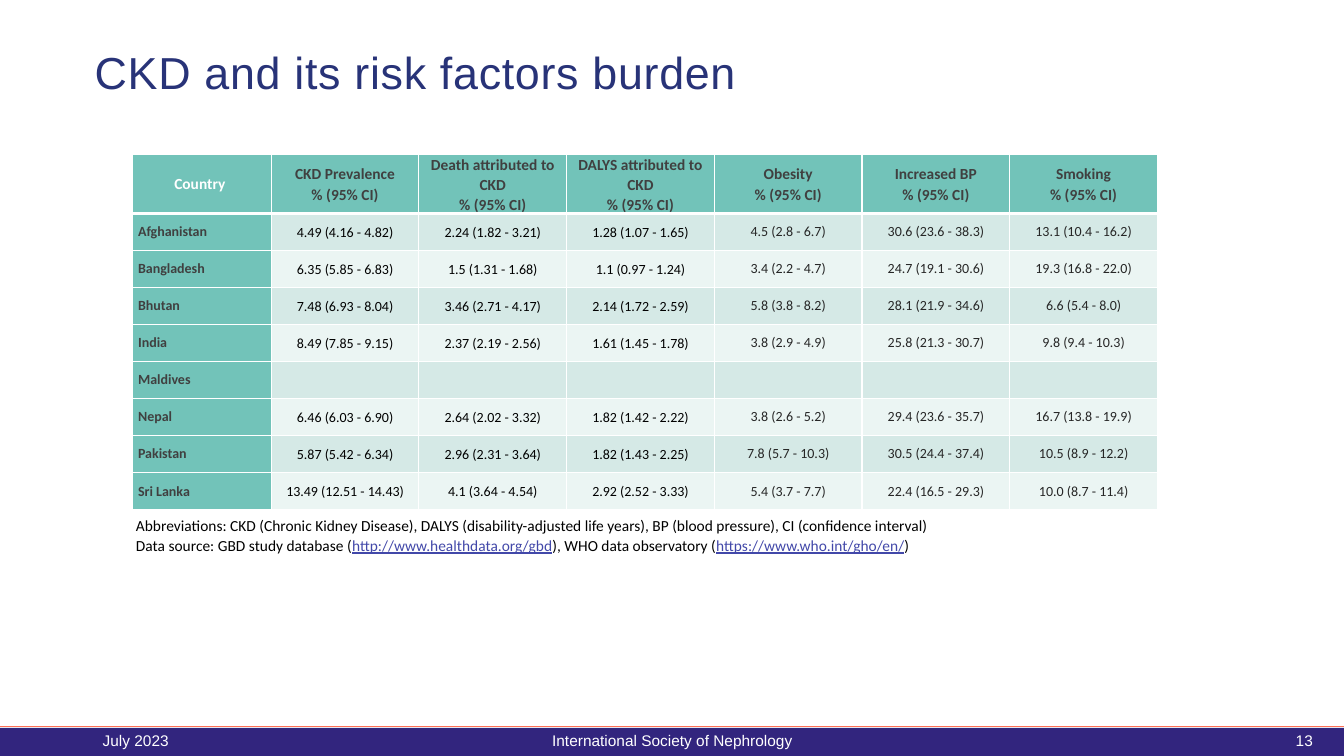
"""Builds the slide on chronic kidney disease and its risk factors by country."""
from lxml.etree import SubElement
from pptx import Presentation
from pptx.dml.color import RGBColor as RGB
from pptx.enum.shapes import MSO_CONNECTOR, MSO_SHAPE
from pptx.enum.text import MSO_ANCHOR as ANCHOR, MSO_AUTO_SIZE as AUTO, PP_ALIGN as ALIGN
from pptx.oxml.ns import qn
from pptx.util import Inches, Pt

TITLE = "CKD and its risk factors burden"
CI = "% (95% CI)"
HEADERS = ["Country ", "CKD Prevalence", "Death attributed to CKD", "DALYS attributed to CKD",
           "Obesity", "Increased BP", "Smoking"]
COUNTRIES = [
    ("Afghanistan", "4.49 (4.16 - 4.82)", "2.24 (1.82 - 3.21)", "1.28 (1.07 - 1.65)",
     "4.5 (2.8 - 6.7)", "30.6 (23.6 - 38.3)", "13.1 (10.4 - 16.2)"),
    ("Bangladesh", "6.35 (5.85 - 6.83)", "1.5 (1.31 - 1.68)", "1.1 (0.97 - 1.24)",
     "3.4 (2.2 - 4.7)", "24.7 (19.1 - 30.6)", "19.3 (16.8 - 22.0)"),
    ("Bhutan", "7.48 (6.93 - 8.04)", "3.46 (2.71 - 4.17)", "2.14 (1.72 - 2.59)",
     "5.8 (3.8 - 8.2)", "28.1 (21.9 - 34.6)", "6.6 (5.4 - 8.0)"),
    ("India", "8.49 (7.85 - 9.15)", "2.37 (2.19 - 2.56)", "1.61 (1.45 - 1.78)",
     "3.8 (2.9 - 4.9)", "25.8 (21.3 - 30.7)", "9.8 (9.4 - 10.3)"),
    ("Maldives", "", "", "", "", "", ""),
    ("Nepal", "6.46 (6.03 - 6.90)", "2.64 (2.02 - 3.32)", "1.82 (1.42 - 2.22)",
     "3.8 (2.6 - 5.2)", "29.4 (23.6 - 35.7)", "16.7 (13.8 - 19.9)"),
    ("Pakistan", "5.87 (5.42 - 6.34)", "2.96 (2.31 - 3.64)", "1.82 (1.43 - 2.25)",
     "7.8 (5.7 - 10.3)", "30.5 (24.4 - 37.4)", "10.5 (8.9 - 12.2)"),
    ("Sri Lanka", "13.49 (12.51 - 14.43)", "4.1 (3.64 - 4.54)", "2.92 (2.52 - 3.33)",
     "5.4 (3.7 - 7.7)", "22.4 (16.5 - 29.3)", "10.0 (8.7 - 11.4)"),
]
NOTES = [
    [("Abbreviations: CKD (Chronic Kidney Disease), DALYS (disability-adjusted life years), "
      "BP (blood pressure), CI (confidence interval)", "note")],
    [("Data source: GBD study database (", "note"), ("http://www.healthdata.org/gbd", "link"),
     ("), WHO data observatory (", "note"), ("https://www.who.int/gho/en/", "link"), (")", "note")],
]
FOOTER = [
    ("July 2023", 0.92, 3, ALIGN.LEFT),
    ("International Society of Nephrology", 4.42, 4.5, ALIGN.CENTER),
    ("13", 9.42, 3.7, ALIGN.RIGHT),
]
THEME = {
    "bar": "32257E", "rule": "FE7055", "teal": "72C3B9", "bands": ("D5E9E6", "EBF5F3"),
    "border": "FFFFFF",
    "title": ("283378", {"name": "Arial", "size": Pt(32)}),
    "footer": ("FFFFFF", {"name": "Arial", "size": Pt(11)}),
    "corner": ("FFFFFF", {"name": "Calibri", "size": Pt(11), "bold": True}),
    "header": ("404040", {"name": "Calibri", "size": Pt(11), "bold": True}),
    "country": ("404040", {"name": "Calibri", "size": Pt(10), "bold": True}),
    "burden": ("000000", {"name": "Calibri", "size": Pt(10), "bold": False}),
    "risk": ("262626", {"name": "Calibri", "size": Pt(10), "bold": False}),
    "note": ("000000", {"name": "Calibri", "size": Pt(11)}),
    "link": ("4248A9", {"name": "Calibri", "size": Pt(11), "underline": True}),
}
TABLE_W, TABLE_H, COUNTRY_W, HEADER_H = 10.17, 3.51, 1.38, 0.57


def set_all(obj, values):
    for name, value in values.items():
        setattr(obj, name, value)


def write(tf, lines, **para_format):
    for i, runs in enumerate(lines):
        p = tf.paragraphs[0] if i == 0 else tf.add_paragraph()
        set_all(p, para_format)
        for text, style in runs:
            r = p.add_run()
            r.text = text
            color, font = THEME[style]
            set_all(r.font, font)
            r.font.color.rgb = RGB.from_string(color)


def add_text(slide, box, lines, frame_format, **para_format):
    tf = slide.shapes.add_textbox(*map(Inches, box)).text_frame
    set_all(tf, {"word_wrap": True, **frame_format})
    write(tf, lines, **para_format)
    return tf


def add_borders(cell, row):
    tc_pr = cell._tc.get_or_add_tcPr()
    widths = {"L": 1, "R": 1, "T": 3 if row == 1 else 1, "B": 3 if row == 0 else 1}
    for side, width in widths.items():
        ln = SubElement(tc_pr, qn(f"a:ln{side}"), w=str(Pt(width)))
        SubElement(SubElement(ln, qn("a:solidFill")), qn("a:srgbClr"), val=THEME["border"])


def fill_cell(cell, row, col, text):
    add_borders(cell, row)
    fill = THEME["teal"] if row == 0 or col == 0 else THEME["bands"][(row - 1) % 2]
    cell.fill.solid()
    cell.fill.fore_color.rgb = RGB.from_string(fill)
    para_format = {"alignment": ALIGN.CENTER}
    if row == 0:
        style, side = ("header" if col else "corner"), 0.03
        para_format["line_spacing"] = 1.07
    elif col == 0:
        style, side = "country", 0.06
        para_format["alignment"] = ALIGN.LEFT
    else:
        style, side = ("burden", 0.01) if col < 4 else ("risk", 0)
    top = Inches(0.01 if style == "burden" else 0)
    set_all(cell, {"vertical_anchor": ANCHOR.MIDDLE, "margin_left": Inches(side),
                   "margin_right": Inches(side), "margin_top": top, "margin_bottom": 0})
    lines = [text, CI] if row == 0 and col else [text]
    if text:
        write(cell.text_frame, [[(line, style)] for line in lines], **para_format)


def add_burden_table(slide):
    rows = [HEADERS, *COUNTRIES]
    box = map(Inches, (1.31, 1.53, TABLE_W, TABLE_H))
    table = slide.shapes.add_table(len(rows), len(HEADERS), *box).table
    value_w = (TABLE_W - COUNTRY_W) / (len(HEADERS) - 1)
    row_h = (TABLE_H - HEADER_H) / len(COUNTRIES)
    for c, column in enumerate(table.columns):
        column.width = Inches(value_w if c else COUNTRY_W)
    for r, values in enumerate(rows):
        table.rows[r].height = Inches(row_h if r else HEADER_H)
        for c, text in enumerate(values):
            fill_cell(table.cell(r, c), r, c, text)


def add_footer(slide):
    bar = slide.shapes.add_shape(MSO_SHAPE.RECTANGLE, *map(Inches, (0, 7.22, 13.33, 0.28)))
    bar.shadow.inherit = False
    bar.fill.solid()
    bar.fill.fore_color.rgb = RGB.from_string(THEME["bar"])
    bar.line.fill.background()
    rule = slide.shapes.add_connector(MSO_CONNECTOR.STRAIGHT, *map(Inches, (0, 7.21, 13.33, 7.21)))
    rule.line.color.rgb = RGB.from_string(THEME["rule"])
    rule.line.width = Pt(0.75)
    SubElement(rule._element.spPr, qn("a:effectLst"))
    for text, left, width, align in FOOTER:
        add_text(slide, (left, 7.15, width, 0.4), [[(text, "footer")]],
                 {"vertical_anchor": ANCHOR.MIDDLE}, alignment=align)


def main():
    prs = Presentation()
    set_all(prs, {"slide_width": Inches(13.33), "slide_height": Inches(7.5)})
    slide = prs.slides.add_slide(prs.slide_layouts[6])
    add_footer(slide)
    add_burden_table(slide)
    add_text(slide, (1.25, 5.06, 8.25, 0.49), NOTES,
             {"auto_size": AUTO.SHAPE_TO_FIT_TEXT}, line_spacing=1.07)
    title = add_text(slide, (0.84, 0.39, 9.26, 0.71), [[(TITLE, "title")]],
                     {"vertical_anchor": ANCHOR.MIDDLE}, line_spacing=0.9)
    title.paragraphs[0].runs[0]._r.get_or_add_rPr().set("spc", "50")
    prs.save("out.pptx")


if __name__ == "__main__":
    main()
